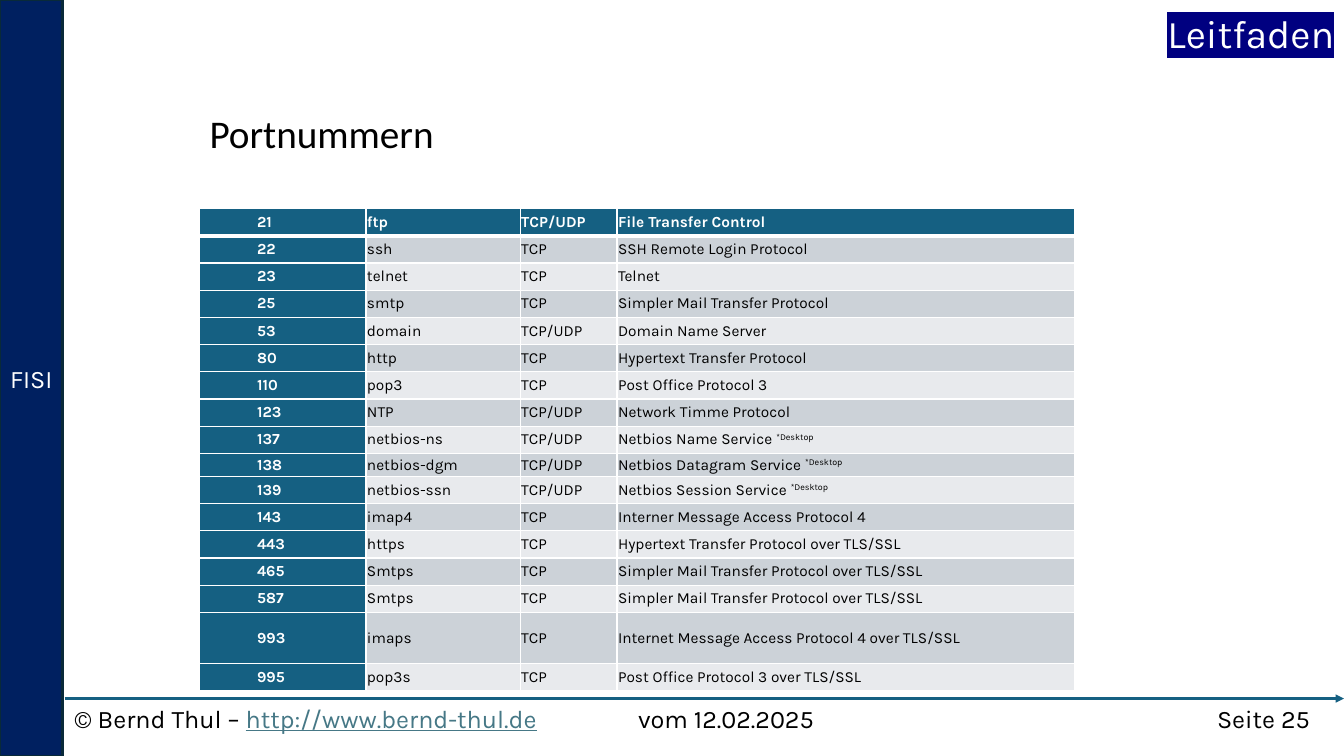
from lxml import etree
from pptx import Presentation, util as u
from pptx.dml.color import RGBColor
from pptx.enum import shapes, text
from pptx.oxml import ns

WHITE = RGBColor(0xFF, 0xFF, 0xFF)
BLACK = RGBColor(0x00, 0x00, 0x00)
NAVY = RGBColor(0x00, 0x20, 0x60)
NAVY_EDGE = RGBColor(0x09, 0x2A, 0x39)
MARKER = RGBColor(0x00, 0x00, 0x80)
TEAL = RGBColor(0x15, 0x60, 0x82)
LINK = RGBColor(0x46, 0x78, 0x86)
BAND_DARK = RGBColor(0xCC, 0xD2, 0xD8)
BAND_LIGHT = RGBColor(0xE8, 0xEA, 0xED)

COLUMN_WIDTHS = [1.65, 1.53, 0.96, 4.54]
ROW_HEIGHT = 0.27
SPECIAL_HEIGHTS = {"138": 0.23, "993": 0.51}
FOOTNOTE = "*Desktop"
FOOTNOTE_PORTS = {"137", "138", "139"}
PORTS = [
    ("21", "ftp", "TCP/UDP", "File Transfer Control"),
    ("22", "ssh", "TCP", "SSH Remote Login Protocol"),
    ("23", "telnet", "TCP", "Telnet"),
    ("25", "smtp", "TCP", "Simpler Mail Transfer Protocol"),
    ("53", "domain", "TCP/UDP", "Domain Name Server"),
    ("80", "http", "TCP", "Hypertext Transfer Protocol"),
    ("110", "pop3", "TCP", "Post Office Protocol 3"),
    ("123", "NTP", "TCP/UDP", "Network Timme Protocol"),
    ("137", "netbios-ns", "TCP/UDP", "Netbios Name Service "),
    ("138", "netbios-dgm", "TCP/UDP", "Netbios Datagram Service "),
    ("139", "netbios-ssn", "TCP/UDP", "Netbios Session Service "),
    ("143", "imap4", "TCP", "Interner Message Access Protocol 4"),
    ("443", "https", "TCP", "Hypertext Transfer Protocol over TLS/SSL"),
    ("465", "Smtps", "TCP", "Simpler Mail Transfer Protocol over TLS/SSL"),
    ("587", "Smtps", "TCP", "Simpler Mail Transfer Protocol over TLS/SSL"),
    ("993", "imaps", "TCP", "Internet Message Access Protocol 4 over TLS/SSL"),
    ("995", "pop3s", "TCP", "Post Office Protocol 3 over TLS/SSL"),
]


def add_xml(parent, tag, **attributes):
    return etree.SubElement(parent, ns.qn(tag), attributes)


class SlideBuilder:
    """Draws styled elements on the current slide."""

    def __init__(self, slide, font="Karla"):
        self.slide = slide
        self.font = font

    def format_run(self, run, size, color, bold=False, font=None):
        run.font.name = font or self.font
        run.font.size = u.Pt(size)
        run.font.color.rgb = color
        run.font.bold = bold

    def append_run(self, paragraph, content, size, color):
        run = paragraph.add_run()
        run.text = content
        self.format_run(run, size, color)
        return run

    def bar(self, left, top, width, height, label):
        shape = self.slide.shapes.add_shape(
            shapes.MSO_SHAPE.RECTANGLE, *map(u.Inches, (left, top, width, height)))
        shape.shadow.inherit = False
        shape.fill.solid()
        shape.fill.fore_color.rgb = NAVY
        shape.line.color.rgb = NAVY_EDGE
        shape.line.width = u.Pt(1.5)
        shape.text_frame.text = label
        shape.text_frame.word_wrap = True
        shape.text_frame.vertical_anchor = text.MSO_ANCHOR.MIDDLE
        paragraph = shape.text_frame.paragraphs[0]
        paragraph.alignment = text.PP_ALIGN.CENTER
        self.format_run(paragraph.runs[0], 18, WHITE)

    def text_box(self, left, top, width, height, content, size=18, color=BLACK,
                 align=text.PP_ALIGN.LEFT, font=None, margin_top=0.05):
        box = self.slide.shapes.add_textbox(*map(u.Inches, (left, top, width, height)))
        frame = box.text_frame
        frame.text = content
        frame.word_wrap = True
        frame.auto_size = text.MSO_AUTO_SIZE.SHAPE_TO_FIT_TEXT
        frame.margin_top = u.Inches(margin_top)
        paragraph = frame.paragraphs[0]
        paragraph.alignment = align
        self.format_run(paragraph.runs[0], size, color, font=font)
        return paragraph

    def highlight(self, run, color):
        properties = run.font._element
        marker = etree.Element(ns.qn("a:highlight"))
        add_xml(marker, "a:srgbClr", val=str(color))
        properties.find(ns.qn("a:solidFill")).addnext(marker)

    def tab_stop(self, paragraph, position):
        tabs = add_xml(paragraph._p.get_or_add_pPr(), "a:tabLst")
        add_xml(tabs, "a:tab", pos=str(u.Inches(position)), algn="l")

    def arrow(self, x1, y1, x2, y2):
        connector = self.slide.shapes.add_connector(
            shapes.MSO_CONNECTOR.STRAIGHT, *map(u.Inches, (x1, y1, x2, y2)))
        connector.line.color.rgb = TEAL
        connector.line.width = u.Pt(1.5)
        add_xml(connector.line._get_or_add_ln(), "a:tailEnd", type="triangle")
        add_xml(connector._element.spPr, "a:effectLst")

    def cell(self, cell, content, fill, color, bold, bottom_width):
        cell.text = content
        cell.vertical_anchor = text.MSO_ANCHOR.MIDDLE
        cell.margin_left = cell.margin_right = u.Inches(0.01)
        cell.margin_top = cell.margin_bottom = u.Inches(0.01)
        properties = cell._tc.get_or_add_tcPr()
        for side, width in (("L", 1), ("R", 1), ("T", 1), ("B", bottom_width)):
            border = add_xml(properties, f"a:ln{side}", w=str(u.Pt(width)))
            add_xml(add_xml(border, "a:solidFill"), "a:srgbClr", val=str(WHITE))
        cell.fill.solid()
        cell.fill.fore_color.rgb = fill
        paragraph = cell.text_frame.paragraphs[0]
        self.format_run(paragraph.runs[0], 11, color, bold)
        return paragraph

    def port_table(self, left, top):
        heights = [SPECIAL_HEIGHTS.get(port[0], ROW_HEIGHT) for port in PORTS]
        table = self.slide.shapes.add_table(
            len(PORTS), len(COLUMN_WIDTHS), u.Inches(left), u.Inches(top),
            u.Inches(sum(COLUMN_WIDTHS)), u.Inches(sum(heights))).table
        table.horz_banding = False
        table.first_col = True
        for column, width in zip(table.columns, COLUMN_WIDTHS):
            column.width = u.Inches(width)
        for row, height in zip(table.rows, heights):
            row.height = u.Inches(height)
        for row_index, port in enumerate(PORTS):
            band = BAND_DARK if row_index % 2 else BAND_LIGHT
            for column_index, content in enumerate(port):
                heading = row_index == 0 or column_index == 0
                paragraph = self.cell(
                    table.cell(row_index, column_index), content,
                    TEAL if heading else band, WHITE if heading else BLACK,
                    heading, 1 if row_index else 3)
                if column_index == 0:
                    paragraph._p.get_or_add_pPr().set("marL", str(u.Inches(0.56)))
            if port[0] in FOOTNOTE_PORTS:
                run = self.append_run(paragraph, FOOTNOTE, 11, BLACK)
                run.font._element.set("baseline", "30000")


def main():
    presentation = Presentation()
    presentation.slide_width = u.Inches(13.33)
    presentation.slide_height = u.Inches(7.5)
    builder = SlideBuilder(presentation.slides.add_slide(presentation.slide_layouts[6]))

    builder.bar(0, 0, 0.62, 7.5, "FISI")
    badge = builder.text_box(9.71, 0.04, 3.62, 0.57, "Leitfaden", 28, WHITE,
                             text.PP_ALIGN.RIGHT)
    builder.highlight(badge.runs[0], MARKER)
    builder.text_box(9.24, 6.93, 3.85, 0.4, "Seite 25", align=text.PP_ALIGN.RIGHT)

    footer = builder.text_box(0.64, 6.93, 7.9, 0.4, "© Bernd Thul – ")
    address = builder.append_run(footer, "http://www.bernd-thul.de", 18, LINK)
    address.font.underline = True
    builder.append_run(footer, "\tvom 12.02.2025", 18, BLACK)
    builder.tab_stop(footer, 5.59)
    builder.arrow(0.64, 6.93, 13.33, 6.93)

    builder.text_box(1.98, 0.98, 6.67, 0.62, "Portnummern", 28,
                     font="Calibri", margin_top=0.1)
    builder.port_table(1.98, 2.07)
    presentation.save("out.pptx")


if __name__ == "__main__":
    main()
